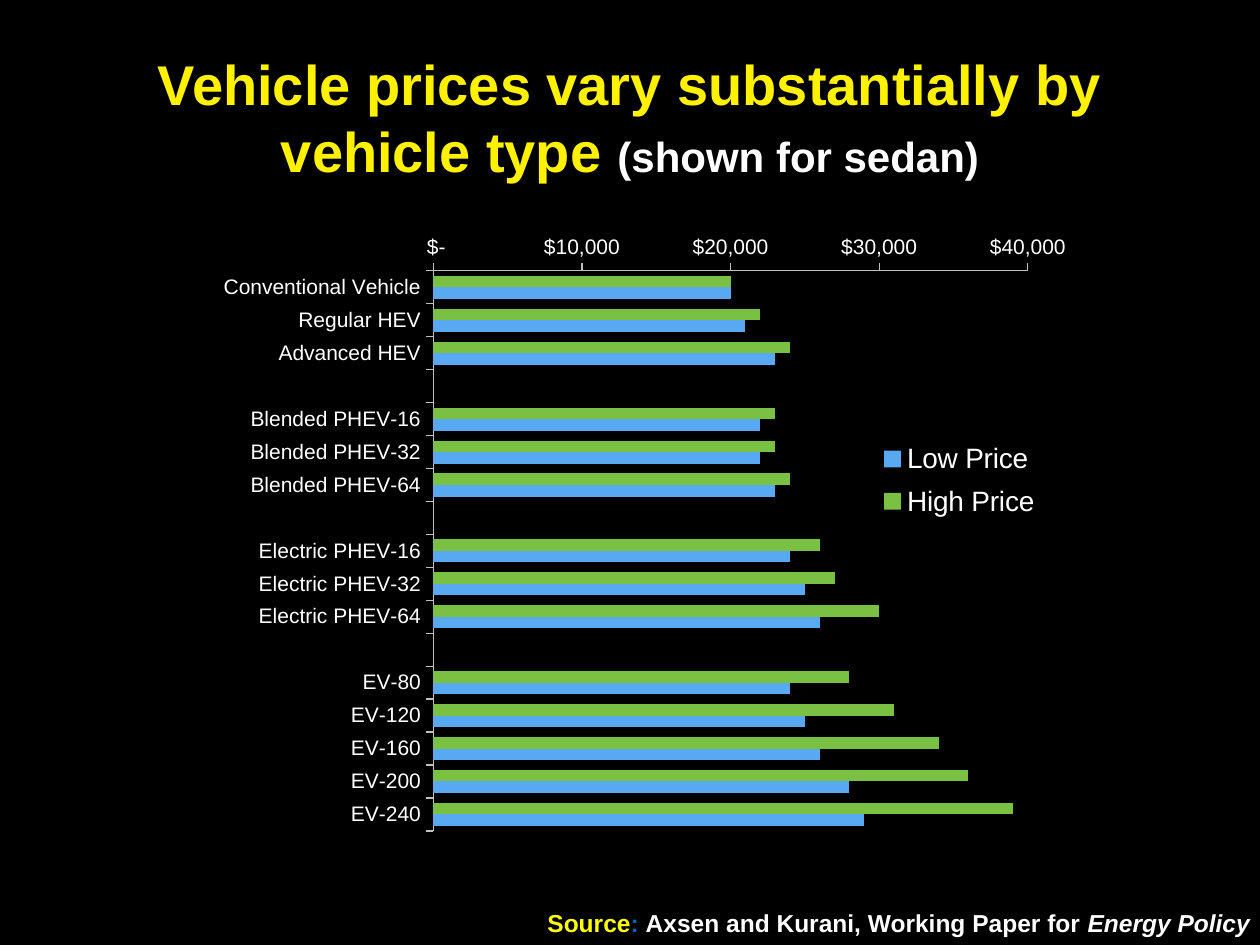
from dataclasses import dataclass

from lxml.etree import SubElement
from pptx import Presentation
from pptx.chart.data import CategoryChartData
from pptx.dml.color import RGBColor
from pptx.enum.chart import XL_CHART_TYPE as ChartType
from pptx.enum.chart import XL_LEGEND_POSITION as LegendSide
from pptx.enum.chart import XL_TICK_LABEL_POSITION as LabelSide
from pptx.enum.chart import XL_TICK_MARK as Tick
from pptx.enum.text import MSO_ANCHOR as Anchor
from pptx.enum.text import PP_ALIGN as Align
from pptx.oxml.ns import qn
from pptx.util import Inches, Pt


@dataclass(frozen=True)
class Theme:
    font: str = "Arial"
    background: str = "000000"
    text: str = "FFFFFF"
    title: str = "FFF100"
    source: str = "FFFF00"
    colon: str = "0067B1"
    axis: str = "C0C0C0"
    high: str = "7AC143"
    low: str = "59A9F2"
    title_size: int = 32
    subtitle_size: int = 24
    legend_size: int = 16
    source_size: int = 14
    axis_size: int = 12
    chart_size: int = 10


THEME = Theme()

# Vehicle type, high price, low price; None leaves a gap between groups
PRICES = [
    ("Conventional Vehicle", 20000, 20000),
    ("Regular HEV", 22000, 21000),
    ("Advanced HEV", 24000, 23000),
    ("", None, None),
    ("Blended PHEV-16", 23000, 22000),
    ("Blended PHEV-32", 23000, 22000),
    ("Blended PHEV-64", 24000, 23000),
    ("", None, None),
    ("Electric PHEV-16", 26000, 24000),
    ("Electric PHEV-32", 27000, 25000),
    ("Electric PHEV-64", 30000, 26000),
    ("", None, None),
    ("EV-80", 28000, 24000),
    ("EV-120", 31000, 25000),
    ("EV-160", 34000, 26000),
    ("EV-200", 36000, 28000),
    ("EV-240", 39000, 29000),
]
DOLLARS = '_-"$"* #,##0_-;\\-"$"* #,##0_-;_-"$"* "-"'


def style_font(font, size, color, bold=False, italic=False):
    font.name = THEME.font
    font.size = Pt(size)
    font.color.rgb = RGBColor.from_string(color)
    font.bold = bold
    font.italic = italic


def place(shape, left, top, width, height):
    shape.left, shape.top = Inches(left), Inches(top)
    shape.width, shape.height = Inches(width), Inches(height)


def set_layout(parent, index, box, inner=False):
    """Fix a chart part at box: x, y, width, height as shares of the chart."""
    for old in parent.findall(qn("c:layout")):
        parent.remove(old)
    layout = SubElement(parent, qn("c:layout"))
    parent.insert(index, layout)
    manual = SubElement(layout, qn("c:manualLayout"))
    settings = [("layoutTarget", "inner")] if inner else []
    settings += [("xMode", "edge"), ("yMode", "edge")]
    settings += zip("xywh", box)
    for tag, value in settings:
        SubElement(manual, qn(f"c:{tag}")).set("val", str(value))


class SlideBuilder:
    """Holds the theme and the slide being filled."""

    def __init__(self, deck, theme):
        self.theme = theme
        self.slide = deck.slides.add_slide(deck.slide_layouts[5])
        fill = self.slide.background.fill
        fill.solid()
        fill.fore_color.rgb = RGBColor.from_string(theme.background)

    def fill_text(self, frame, align, parts):
        """Fill a frame with parts of (text, size, color, italic)."""
        frame.word_wrap = True
        line = frame.paragraphs[0]
        line.alignment = align
        for text, size, color, italic in parts:
            run = line.add_run()
            run.text = text
            style_font(run.font, size, color, bold=True, italic=italic)

    def title(self, box, parts):
        heading = self.slide.shapes.title
        place(heading, *box)
        heading.text_frame.vertical_anchor = Anchor.MIDDLE
        self.fill_text(heading.text_frame, Align.CENTER, parts)

    def note(self, box, parts):
        note = self.slide.shapes.add_textbox(*map(Inches, box))
        self.fill_text(note.text_frame, Align.RIGHT, parts)

    def price_chart(self, box, rows):
        names, highs, lows = zip(*rows)
        data = CategoryChartData(number_format=DOLLARS)
        data.categories = names
        data.add_series("High Price", highs)
        data.add_series("Low Price", lows)
        chart = self.slide.shapes.add_chart(
            ChartType.BAR_CLUSTERED, *map(Inches, box), data).chart
        chart.has_title = False
        style_font(chart.font, self.theme.chart_size, self.theme.text)

        plot = chart.plots[0]
        plot.gap_width = 86
        plot.overlap = 0
        plot.vary_by_categories = False
        for series, color in zip(plot.series, (self.theme.high, self.theme.low)):
            series.format.fill.solid()
            series.format.fill.fore_color.rgb = RGBColor.from_string(color)

        for axis in (chart.category_axis, chart.value_axis):
            self.style_axis(axis)
        chart.category_axis.reverse_order = True
        chart.category_axis.tick_label_position = LabelSide.LOW
        prices = chart.value_axis
        prices.minimum_scale, prices.maximum_scale = 0, 40000
        prices.major_unit = 10000
        prices.tick_labels.number_format = DOLLARS
        prices.tick_labels.number_format_is_linked = False
        self.legend(chart)
        plot_area = chart._chartSpace.chart.plotArea
        set_layout(plot_area, 0, (0.287, 0.09, 0.642, 0.87), inner=True)

    def style_axis(self, axis):
        axis.has_major_gridlines = False
        axis.major_tick_mark = Tick.OUTSIDE
        axis.minor_tick_mark = Tick.NONE
        axis.format.line.color.rgb = RGBColor.from_string(self.theme.axis)
        axis.format.line.width = Pt(0.75)
        style_font(axis.tick_labels.font, self.theme.axis_size, self.theme.text)

    def legend(self, chart):
        chart.has_legend = True
        legend = chart.legend
        legend.position = LegendSide.RIGHT
        legend.include_in_layout = False
        style_font(legend.font, self.theme.legend_size, self.theme.text)
        set_layout(legend._element, 1, (0.76, 0.34, 0.19, 0.15))


def main():
    deck = Presentation()
    deck.slide_width, deck.slide_height = Inches(10), Inches(7.5)
    slide = SlideBuilder(deck, THEME)
    slide.title((0.5, 0.3, 9, 1.25), [
        ("Vehicle prices vary substantially by vehicle type ",
         THEME.title_size, THEME.title, False),
        ("(shown for sedan)", THEME.subtitle_size, THEME.text, False),
    ])
    slide.price_chart((1.33, 1.69, 7.35, 5.11), PRICES)
    slide.note((3.18, 7.16, 6.84, 0.34), [
        ("Source", THEME.source_size, THEME.source, False),
        (": ", THEME.source_size, THEME.colon, False),
        ("Axsen and Kurani, Working Paper for ",
         THEME.source_size, THEME.text, False),
        ("Energy Policy", THEME.source_size, THEME.text, True),
    ])
    deck.save("out.pptx")


if __name__ == "__main__":
    main()
